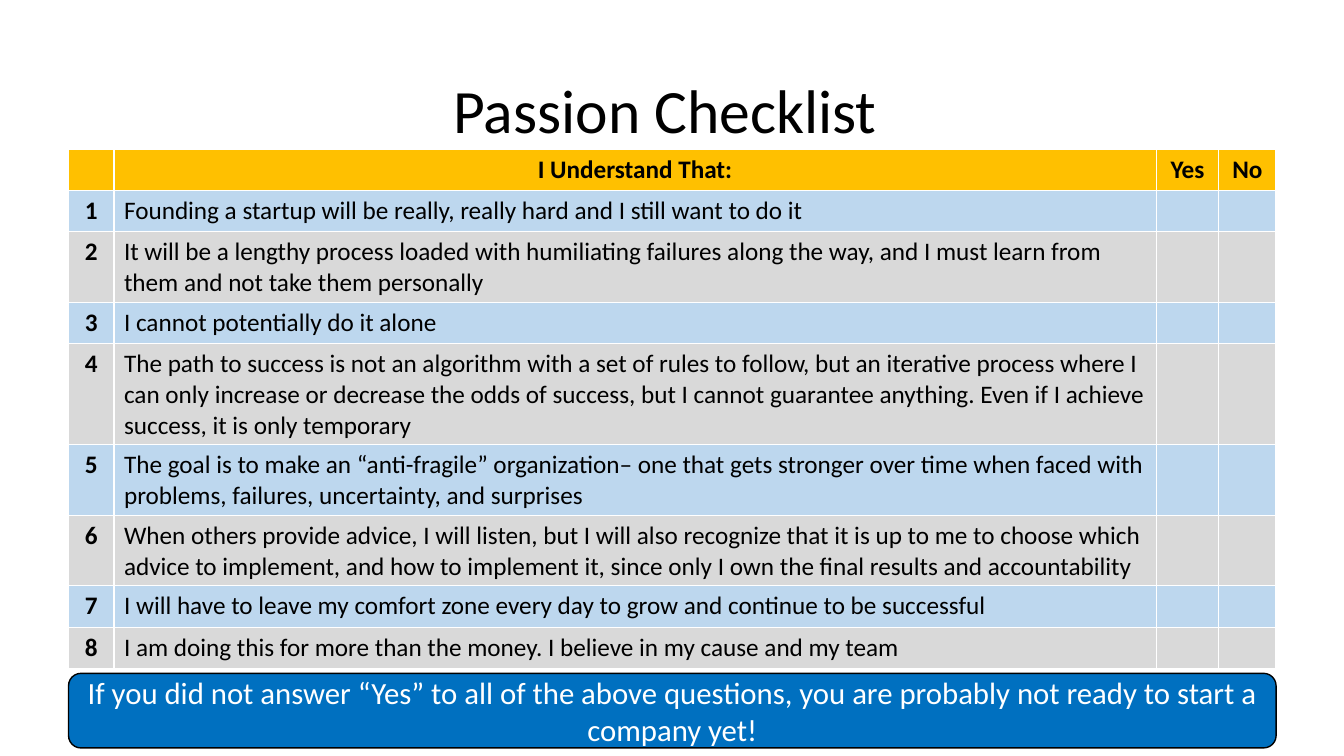
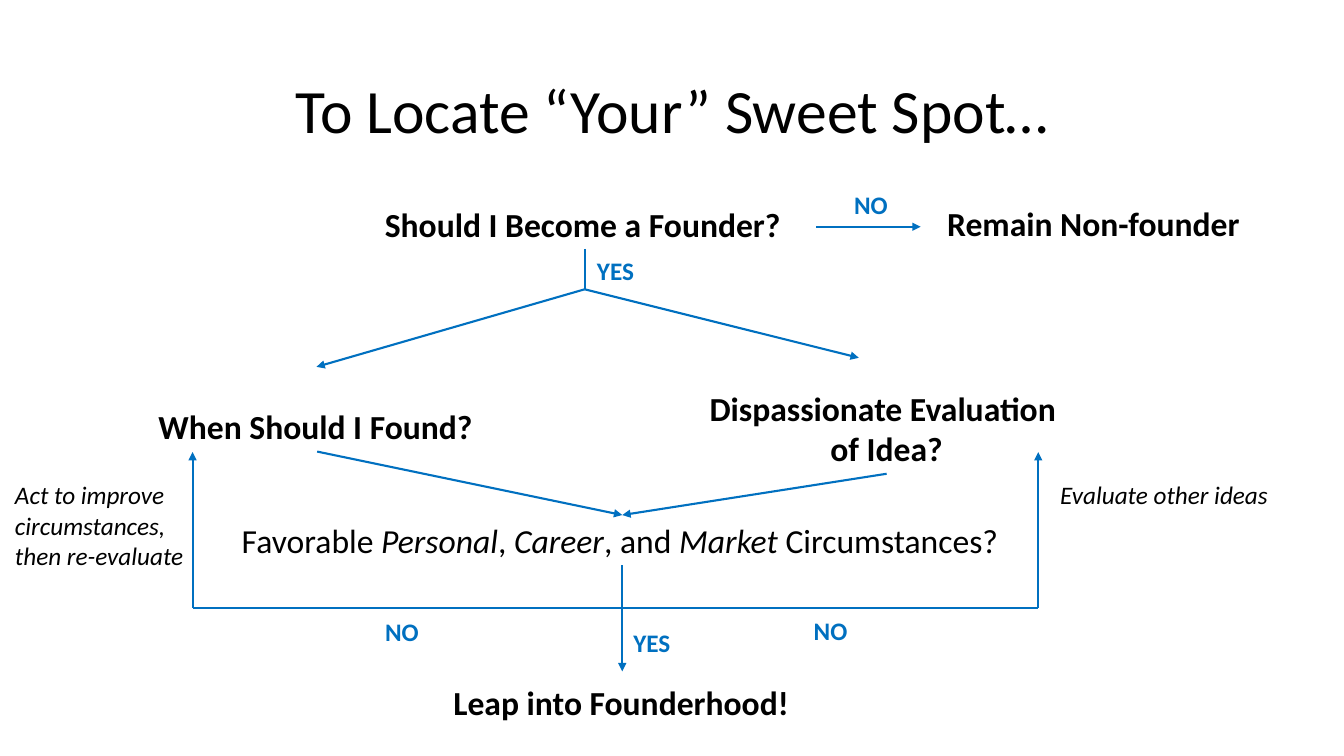
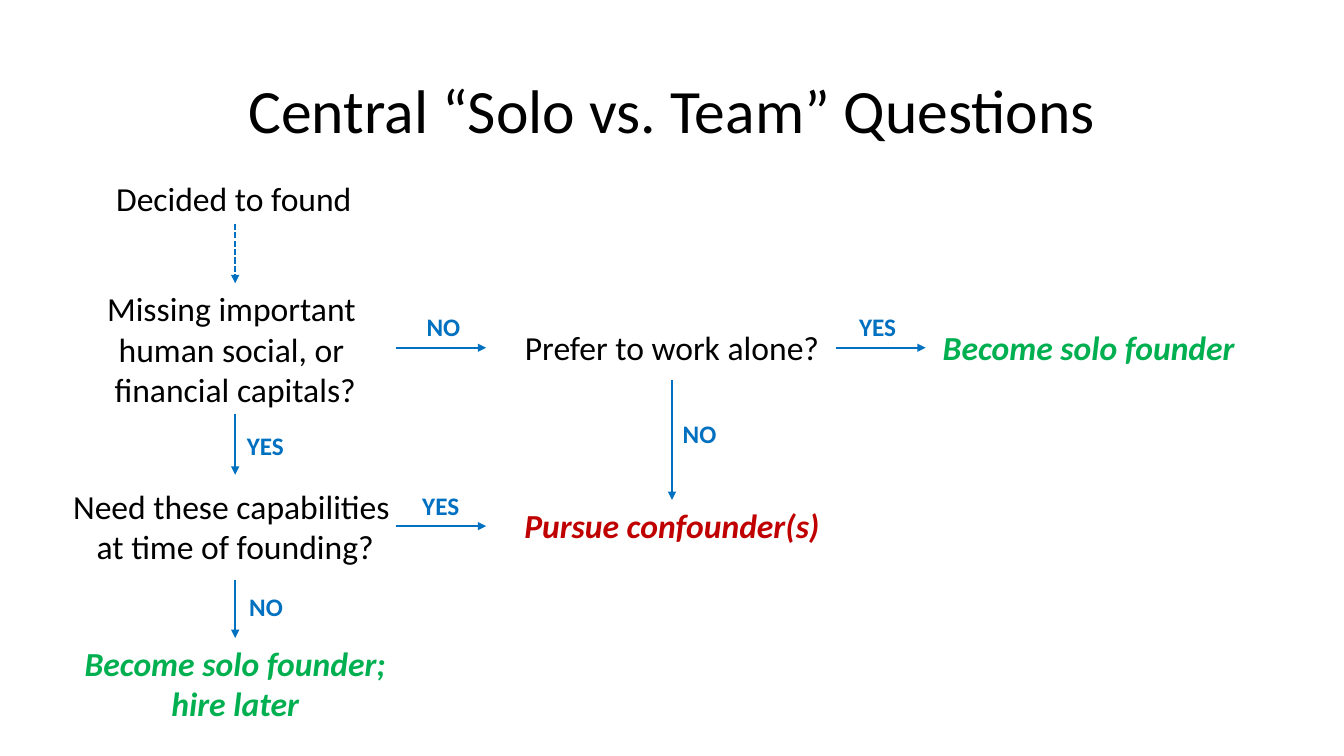
"""Build three slides on founding: a checklist and two decision flows."""
from lxml import etree
from pptx import Presentation
from pptx.dml.color import RGBColor
from pptx.enum.dml import MSO_LINE
from pptx.enum.shapes import MSO_CONNECTOR, MSO_SHAPE
from pptx.enum.text import MSO_ANCHOR, MSO_AUTO_SIZE, PP_ALIGN
from pptx.oxml.ns import qn
from pptx.util import Inches, Pt

LEFT, CENTER = PP_ALIGN.LEFT, PP_ALIGN.CENTER
MIDDLE = MSO_ANCHOR.MIDDLE
GROW = MSO_AUTO_SIZE.SHAPE_TO_FIT_TEXT
STRAIGHT = MSO_CONNECTOR.STRAIGHT
ROUNDED = MSO_SHAPE.ROUNDED_RECTANGLE
DASHED = MSO_LINE.SQUARE_DOT
TOP, BOTTOM = 0, 2

FONT = "Calibri"
WIDE, HIGH = 13.33, 7.5
BLACK = RGBColor(0x00, 0x00, 0x00)
WHITE = RGBColor(0xFF, 0xFF, 0xFF)
BLUE = RGBColor(0x00, 0x70, 0xC0)
GREEN = RGBColor(0x00, 0xB0, 0x50)
RED = RGBColor(0xC0, 0x00, 0x00)
GOLD = RGBColor(0xFF, 0xC0, 0x00)
SKY = RGBColor(0xBD, 0xD7, 0xEE)
GREY = RGBColor(0xD9, 0xD9, 0xD9)

HEADS = ("", "I Understand That:", "Yes", "No")
CLAIMS = (
    "Founding a startup will be really, really hard and I still want to do it",
    "It will be a lengthy process loaded with humiliating failures along the way, "
    "and I must learn from them and not take them personally",
    "I cannot potentially do it alone",
    "The path to success is not an algorithm with a set of rules to follow, but an "
    "iterative process where I can only increase or decrease the odds of success, "
    "but I cannot guarantee anything. Even if I achieve success, it is only temporary",
    "The goal is to make an “anti-fragile” organization– one that gets stronger over "
    "time when faced with problems, failures, uncertainty, and surprises",
    "When others provide advice, I will listen, but I will also recognize that it is "
    "up to me to choose which advice to implement, and how to implement it, since "
    "only I own the final results and accountability",
    "I will have to leave my comfort zone every day to grow and continue to be successful",
    "I am doing this for more than the money. I believe in my cause and my team",
)


def across(share):
    """Turn a percentage of the slide's width into a length."""
    return Inches(WIDE * share / 100)


def down(share):
    """Turn a percentage of the slide's height into a length."""
    return Inches(HIGH * share / 100)


def area(x, y, w, h):
    """Turn four percentages into left, top, width and height."""
    return across(x), down(y), across(w), down(h)


def write(frame, text, size=24, color=BLACK, bold=False, italic=False,
          align=CENTER, lead=None):
    """Write one paragraph; asterisks toggle italics and newlines break lines."""
    para = frame.paragraphs[0]
    para.alignment = align
    para.line_spacing = lead
    for part, chunk in enumerate(text.split("*")):
        for row, words in enumerate(chunk.split("\n")):
            if row:
                para.add_line_break()
            run = para.add_run()
            run.text = words
            font = run.font
            font.name, font.size, font.color.rgb = FONT, Pt(size), color
            font.bold = bold
            font.italic = italic != (part % 2 == 1)


def start(deck, title):
    """Add a blank slide with the shared title."""
    slide = deck.slides.add_slide(deck.slide_layouts[6])
    frame = slide.shapes.add_textbox(*area(6.9, 5.33, 86.25, 19.33)).text_frame
    frame.word_wrap = True
    frame.vertical_anchor = MIDDLE
    write(frame, title, size=44, lead=0.9)
    return slide


def label(slide, text, mid, y, w, size=24, **style):
    """Add text centred on column mid, as tall as its lines need."""
    tall = (text.count("\n") + 1) * size / 60 + 0.1
    box = slide.shapes.add_textbox(across(mid - w / 2), down(y), across(w), Inches(tall))
    box.text_frame.word_wrap = False
    box.text_frame.auto_size = GROW
    write(box.text_frame, text, size=size, **style)
    return box


def tags(slide, spots):
    """Add the YES and NO marks beside the arrows."""
    for text, mid, y in spots:
        label(slide, text, mid, y, 5.5, size=18, color=BLUE, bold=True)


def link(slide, tail, tip, head=True, dash=None):
    """Draw a line between two ends, each a point or a shape and its side."""
    line = slide.shapes.add_connector(STRAIGHT, 0, 0, 0, 0)
    if isinstance(tail[0], (int, float)):
        line.begin_x, line.begin_y = across(tail[0]), down(tail[1])
    else:
        line.begin_connect(*tail)
    if isinstance(tip[0], (int, float)):
        line.end_x, line.end_y = across(tip[0]), down(tip[1])
    else:
        line.end_connect(*tip)
    line.line.color.rgb = BLUE
    line.line.width = Pt(1.5)
    if dash:
        line.line.dash_style = dash
    props = line.element.spPr
    if head:
        etree.SubElement(props.find(qn("a:ln")), qn("a:tailEnd"), type="triangle")
    etree.SubElement(props, qn("a:effectLst"))


def grid(slide, rows, x, y, cols, high):
    """Add the checklist table with a gold head and striped rows."""
    shape = slide.shapes.add_table(
        len(rows), len(cols), *area(x, y, sum(cols), high * len(rows)))
    table = shape.table
    for col, wide in zip(table.columns, cols):
        col.width = across(wide)
    for r, row in enumerate(rows):
        for c, text in enumerate(row):
            cell = table.cell(r, c)
            cell.fill.solid()
            cell.fill.fore_color.rgb = (SKY if r % 2 else GREY) if r else GOLD
            claim = r > 0 and c == 1
            if text:
                write(cell.text_frame, text, size=18, bold=not claim,
                      align=LEFT if claim else CENTER)


def banner(slide, text, *place):
    """Add a rounded blue banner."""
    shape = slide.shapes.add_shape(ROUNDED, *area(*place))
    shape.shadow.inherit = False
    shape.fill.solid()
    shape.fill.fore_color.rgb = BLUE
    shape.line.color.rgb = BLACK
    shape.line.width = Pt(1)
    shape.text_frame.vertical_anchor = MIDDLE
    write(shape.text_frame, text, size=22, color=WHITE)


def passion(deck):
    """Build the checklist slide."""
    slide = start(deck, "Passion Checklist ")
    banner(slide, "If you did not answer “Yes” to all of the above questions, "
           "you are probably not ready to start a company yet!", 5.1, 89.07, 89.85, 9.87)
    rows = [HEADS] + [(str(n), claim, "", "") for n, claim in enumerate(CLAIMS, 1)]
    grid(slide, rows, 5.1, 19.73, (3.38, 77.55, 4.65, 4.27), 5.47)


def sweet(deck):
    """Build the sweet spot flow."""
    slide = start(deck, "To Locate “Your” Sweet Spot…")
    ask = label(slide, "Should I Become a Founder?", 43.5, 26.27, 31.2,
                bold=True, align=LEFT)
    when = label(slide, "When Should I Found?", 23.6, 53.07, 25.1, bold=True, align=LEFT)
    idea = label(slide, "Dispassionate Evaluation \nof Idea?", 65.97, 50.67, 28.1, bold=True)
    odds = label(slide, "Favorable *Personal*, *Career*, and *Market* Circumstances?",
                 46.3, 68.13, 58.1, align=LEFT)
    label(slide, "Remain Non-founder ", 81.64, 26.13, 24.1, bold=True)
    label(slide, "Leap into Founderhood!", 46.35, 89.6, 26.7, bold=True, align=LEFT)
    label(slide, "Act to improve \ncircumstances, \nthen re-evaluate", 7.5, 62.8, 14.25,
          size=18, italic=True, align=LEFT)
    label(slide, "Evaluate other ideas", 86.7, 62.8, 17.1, size=18, italic=True, align=LEFT)

    fork, knot = (43.5, 38.27), (46.3, 80.4)
    link(slide, (60.75, 30), (68.5, 30))
    link(slide, (ask, BOTTOM), fork, head=False)
    for tip in ((23.55, 48.53), (63.9, 47.33)):
        link(slide, fork, tip)
    for box in (when, idea):
        link(slide, (box, BOTTOM), (odds, TOP))
    link(slide, (odds, BOTTOM), knot, head=False)
    for side in (14.33, 77.25):
        link(slide, knot, (side, knot[1]), head=False)
        link(slide, (side, knot[1]), (side, 59.8))
    link(slide, knot, (knot[0], 88.8))
    tags(slide, (("NO", 64.8, 24.4), ("NO", 61.8, 80.8), ("NO", 29.9, 80.93),
                 ("YES", 45.8, 33.07), ("YES", 48.5, 82.27)))


def team(deck):
    """Build the solo or team flow."""
    slide = start(deck, "Central “Solo vs. Team” Questions")
    near, mid, far = 17.5, 50, 81
    bold = {"bold": True, "italic": True}
    found = label(slide, "Decided to found", near, 22.93, 19.2, align=LEFT)
    lack = label(slide, "Missing important \nhuman social, or \nfinancial capitals?",
                 near, 37.47, 20.7)
    label(slide, "Need these capabilities \nat time of founding?", near, 63.6, 25.9)
    later = label(slide, "Become solo founder;\nhire later", near, 84.4, 24.7,
                  color=GREEN, **bold)
    label(slide, "Prefer to work alone?", mid, 42.53, 23.6)
    join = label(slide, "Pursue confounder(s)", mid, 66.13, 23.9, color=RED, **bold)
    label(slide, "Become solo founder", far, 42.53, 23.4, color=GREEN, **bold)

    link(slide, (found, BOTTOM), (lack, TOP), dash=DASHED)
    link(slide, (lack, BOTTOM), (near, 62.8))
    link(slide, (near, 76.67), (later, TOP))
    link(slide, (mid, 50.27), (join, TOP))
    for x, y in ((29.5, 46), (62.2, 46), (29.5, 69.6)):
        link(slide, (x, y), (x + 6.67, y))
    tags(slide, (("YES", 65.3, 40.53), ("NO", 52.05, 54.67), ("NO", 33, 40.53),
                 ("YES", 32.8, 64.27), ("YES", 19.75, 56.27), ("NO", 19.8, 77.6)))


def main():
    """Build and save the deck."""
    deck = Presentation()
    deck.slide_width, deck.slide_height = Inches(WIDE), Inches(HIGH)
    for build in (passion, sweet, team):
        build(deck)
    deck.save("out.pptx")


if __name__ == "__main__":
    main()
